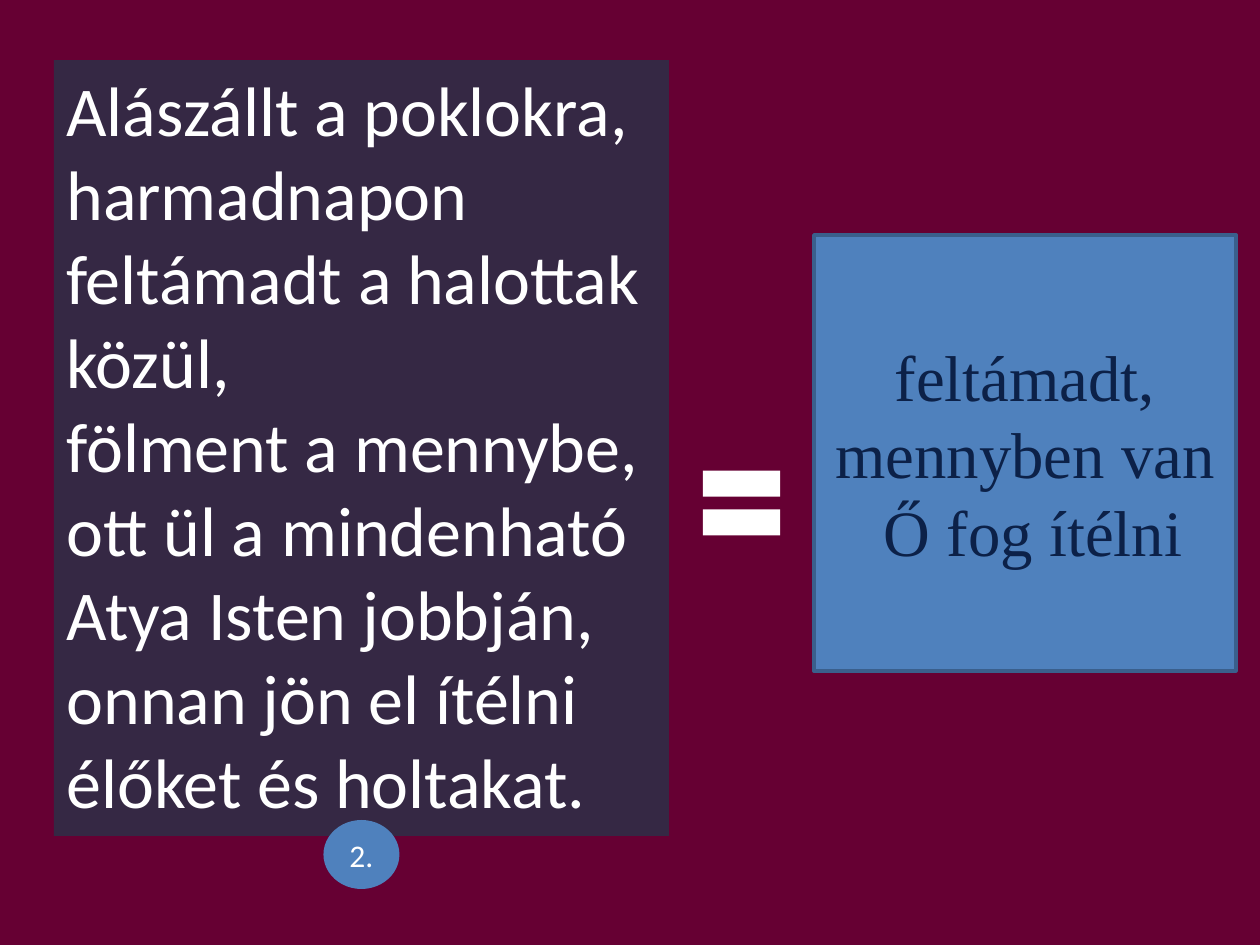
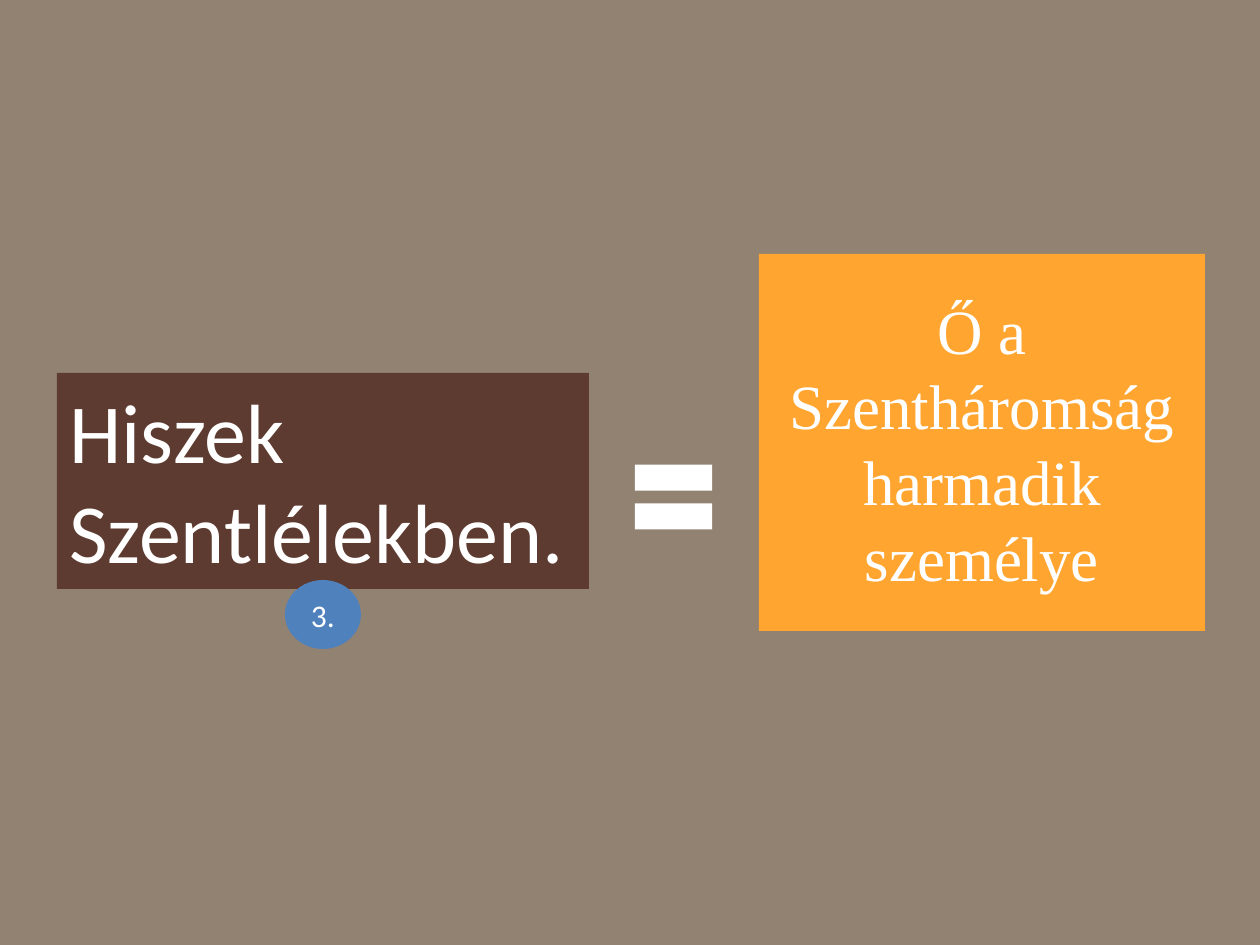
from dataclasses import dataclass

from pptx import Presentation
from pptx.dml.color import RGBColor
from pptx.enum.shapes import MSO_SHAPE as Shape
from pptx.enum.text import MSO_ANCHOR as Anchor, MSO_AUTO_SIZE as AutoSize, PP_ALIGN as Align
from pptx.util import Emu, Pt

PX_PER_INCH = 126
SLIDE_SIZE = (1260, 945)
EQUAL_SIZE = (105, 110)
BADGE_SIZE = (76, 69)
BLANK_LAYOUT = 6


@dataclass(frozen=True)
class Theme:
    wine: str = "660033"
    taupe: str = "928272"
    violet: str = "352844"
    brown: str = "5E3B30"
    blue: str = "4F81BD"
    blue_edge: str = "3A5F8C"
    orange: str = "FFA530"
    navy: str = "0C2148"
    white: str = "FFFFFF"
    sans: str = "Calibri"
    serif: str = "Times New Roman"
    creed_size: int = 40
    short_creed_size: int = 48
    meaning_size: int = 36
    wide_meaning_size: int = 37
    badge_size: int = 18
    edge_width: int = 2


def px(length):
    return Emu(round(length * 914400 / PX_PER_INCH))


def rgb(code):
    return RGBColor.from_string(code)


def write(shape, paragraphs, *, font, size, color, align=Align.CENTER, anchor=Anchor.MIDDLE):
    frame = shape.text_frame
    frame.word_wrap = True
    frame.vertical_anchor = anchor
    for index, text in enumerate(paragraphs):
        para = frame.add_paragraph() if index else frame.paragraphs[0]
        para.alignment = align
        span = para.add_run()
        span.text = text
        span.font.name = font
        span.font.size = Pt(size)
        span.font.color.rgb = rgb(color)


class CreedDeck:
    def __init__(self, theme):
        self.theme = theme
        self.deck = Presentation()
        self.deck.slide_width, self.deck.slide_height = map(px, SLIDE_SIZE)
        self.page = None

    def add_page(self, background):
        self.page = self.deck.slides.add_slide(self.deck.slide_layouts[BLANK_LAYOUT])
        fill = self.page.background.fill
        fill.solid()
        fill.fore_color.rgb = rgb(background)

    def add_shape(self, kind, bounds, fill, edge=None):
        shape = self.page.shapes.add_shape(kind, *map(px, bounds))
        shape.shadow.inherit = False
        shape.fill.solid()
        shape.fill.fore_color.rgb = rgb(fill)
        if edge:
            shape.line.color.rgb = rgb(edge)
            shape.line.width = Pt(self.theme.edge_width)
        else:
            shape.line.fill.background()
        return shape

    def add_meaning(self, bounds, paragraphs, fill, color, size, edge=None):
        box = self.add_shape(Shape.RECTANGLE, bounds, fill, edge)
        write(box, paragraphs, font=self.theme.serif, size=size, color=color)

    def add_creed(self, bounds, paragraphs, fill, size):
        box = self.add_shape(Shape.RECTANGLE, bounds, fill)
        write(box, paragraphs, font=self.theme.sans, size=size, color=self.theme.white,
              align=Align.LEFT, anchor=Anchor.TOP)
        box.text_frame.auto_size = AutoSize.SHAPE_TO_FIT_TEXT

    def add_equal(self, left, top):
        self.add_shape(Shape.MATH_EQUAL, (left, top, *EQUAL_SIZE), self.theme.white)

    def add_badge(self, label, creed_bounds, overlap):
        """Centre the numbered badge on the lower edge of the creed box."""
        left, top, width, height = creed_bounds
        badge_left = left + (width - BADGE_SIZE[0]) / 2
        bounds = (badge_left, top + height - overlap, *BADGE_SIZE)
        badge = self.add_shape(Shape.OVAL, bounds, self.theme.blue)
        write(badge, [label], font=self.theme.sans, size=self.theme.badge_size,
              color=self.theme.white)


def add_son_page(deck, theme):
    creed_bounds = (54, 60, 615, 776)
    deck.add_page(theme.wine)
    deck.add_meaning((814, 235, 422, 436), ["feltámadt, mennyben van", " Ő fog ítélni"],
                     theme.blue, theme.navy, theme.wide_meaning_size, edge=theme.blue_edge)
    deck.add_creed(creed_bounds, [
        "Alászállt a poklokra, harmadnapon feltámadt a halottak közül,",
        "fölment a mennybe, ott ül a mindenható Atya Isten jobbján, "
        "onnan jön el ítélni élőket és holtakat.",
    ], theme.violet, theme.creed_size)
    deck.add_equal(689, 448)
    deck.add_badge("2.", creed_bounds, overlap=16)


def add_spirit_page(deck, theme):
    creed_bounds = (57, 373, 532, 216)
    deck.add_page(theme.taupe)
    deck.add_meaning((759, 254, 446, 377), ["Ő a Szentháromság harmadik személye"],
                     theme.orange, theme.white, theme.meaning_size)
    deck.add_equal(621, 442)
    deck.add_creed(creed_bounds, ["Hiszek Szentlélekben."], theme.brown, theme.short_creed_size)
    deck.add_badge("3.", creed_bounds, overlap=9)


def main():
    theme = Theme()
    creed = CreedDeck(theme)
    add_son_page(creed, theme)
    add_spirit_page(creed, theme)
    creed.deck.save("out.pptx")


if __name__ == "__main__":
    main()
